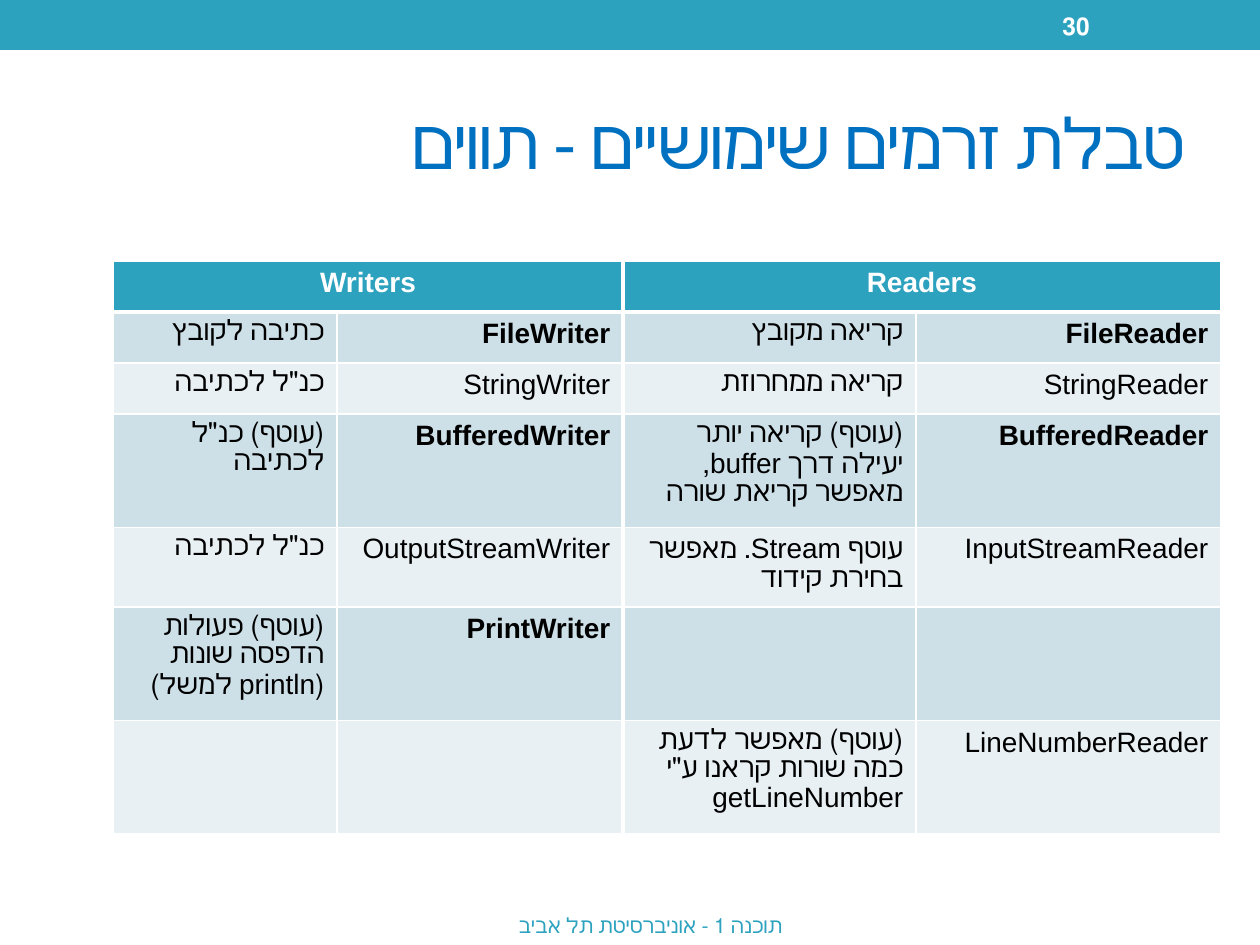
import pptx
import pptx.dml.color
import pptx.enum.shapes
import pptx.enum.text
import pptx.oxml
import pptx.oxml.ns
import pptx.util

EMU_PER_PX = 914400 / 126
COLORS = {"teal": "2DA2BF", "blue": "0070C0", "white": "FFFFFF", "black": "000000",
          "dark_band": "CDE0E8", "light_band": "E8F0F4"}
ALIGN = pptx.enum.text.PP_ALIGN

HEADERS = ["Writers", "Readers"]
STREAMS = [
    ["כתיבה לקובץ", "FileWriter", "קריאה מקובץ", "FileReader"],
    ["כנ\"ל לכתיבה", "StringWriter", "קריאה ממחרוזת", "StringReader"],
    ["(עוטף) כנ\"ל לכתיבה", "BufferedWriter",
     "(עוטף) קריאה יותר יעילה דרך buffer, מאפשר קריאת שורה", "BufferedReader"],
    ["כנ\"ל לכתיבה", "OutputStreamWriter",
     "עוטף Stream. מאפשר בחירת קידוד", "InputStreamReader"],
    ["(עוטף) פעולות הדפסה שונות (println למשל)", "PrintWriter", "", ""],
    ["", "", "(עוטף) מאפשר לדעת כמה שורות קראנו ע\"י getLineNumber", "LineNumberReader"],
]
KEY_CLASSES = {"FileWriter", "FileReader", "BufferedWriter", "BufferedReader", "PrintWriter"}
COLUMN_WIDTHS = [224, 286, 293, 305]
ROW_HEIGHT = 51


def px(length):
    return pptx.util.Emu(round(length * EMU_PER_PX))


def rgb(name):
    return pptx.dml.color.RGBColor.from_string(COLORS[name])


def write_rtl(frame, text, align, color, spacing=None, **font_format):
    """Write one right-to-left paragraph; spacing is in hundredths of a point."""
    paragraph = frame.paragraphs[0]
    paragraph.alignment = align
    paragraph._p.get_or_add_pPr().set("rtl", "1")
    run = paragraph.add_run()
    run.text = text
    for attribute, value in font_format.items():
        setattr(run.font, attribute, value)
    run.font.color.rgb = rgb(color)
    if spacing is not None:
        run._r.get_or_add_rPr().set("spc", str(spacing))


def add_label(slide, box, text, align, color, **font_format):
    frame = slide.shapes.add_textbox(*map(px, box)).text_frame
    frame.word_wrap = True
    frame.vertical_anchor = pptx.enum.text.MSO_ANCHOR.MIDDLE
    write_rtl(frame, text, align, color, **font_format)


def add_top_band(slide, box):
    left, top, width, height = box
    band = slide.shapes.add_shape(pptx.enum.shapes.MSO_SHAPE.RECTANGLE, *map(px, box))
    band.shadow.inherit = False
    band.fill.solid()
    band.fill.fore_color.rgb = rgb("teal")
    band.line.fill.background()
    add_label(slide, (left + 1050, top + 3, 147, height - 5), "30", ALIGN.LEFT, "white",
              name="Arial", size=pptx.util.Pt(14), bold=True)


def set_borders(cell, widths):
    """Draw white cell borders; widths maps each side (L, R, T, B) to points."""
    properties = cell._tc.get_or_add_tcPr()
    for position, side in enumerate("LRTB"):
        properties.insert(position, pptx.oxml.parse_xml(
            f'<a:ln{side} {pptx.oxml.ns.nsdecls("a")} w="{pptx.util.Pt(widths[side])}">'
            f'<a:solidFill><a:srgbClr val="{COLORS["white"]}"/></a:solidFill></a:ln{side}>'))


def fill_cell(cell, text, fill, align, color, bold):
    cell.fill.solid()
    cell.fill.fore_color.rgb = rgb(fill)
    if text:
        write_rtl(cell.text_frame, text, align, color,
                  name="Arial", size=pptx.util.Pt(16), bold=bold)


def add_stream_table(slide, left, top):
    row_count = len(STREAMS) + 1
    table = slide.shapes.add_table(
        row_count, len(COLUMN_WIDTHS), px(left), px(top),
        px(sum(COLUMN_WIDTHS)), px(ROW_HEIGHT * row_count)).table
    for column, width in zip(table.columns, COLUMN_WIDTHS):
        column.width = px(width)
    for row in table.rows:
        row.height = px(ROW_HEIGHT)

    for group, header in enumerate(HEADERS):
        cell = table.cell(0, 2 * group)
        cell.merge(table.cell(0, 2 * group + 1))
        fill_cell(cell, header, "teal", ALIGN.CENTER, "white", True)
        set_borders(cell, {"L": 3 if group else 1, "R": 1 if group else 3, "T": 1, "B": 3})

    for row, texts in enumerate(STREAMS, start=1):
        band = "dark_band" if row % 2 else "light_band"
        for column, text in enumerate(texts):
            cell = table.cell(row, column)
            fill_cell(cell, text, band, ALIGN.RIGHT, "black", text in KEY_CLASSES)
            set_borders(cell, {"L": 3 if column == 2 else 1, "R": 3 if column == 1 else 1,
                               "T": 3 if row == 1 else 1, "B": 1})


def main():
    deck = pptx.Presentation()
    deck.slide_width, deck.slide_height = px(1260), px(945)
    slide = deck.slides.add_slide(deck.slide_layouts[6])
    add_top_band(slide, (0, 0, 1260, 50))
    add_label(slide, (63, 73, 1134, 136), "טבלת זרמים שימושיים - תווים", ALIGN.RIGHT, "blue",
              name="Arial", size=pptx.util.Pt(40), spacing=-100)
    add_stream_table(slide, 113, 261)
    add_label(slide, (367, 903, 567, 45), "תוכנה 1 - אוניברסיטת תל אביב", ALIGN.CENTER, "teal",
              name="Roboto", size=pptx.util.Pt(12))
    deck.save("out.pptx")


if __name__ == "__main__":
    main()
